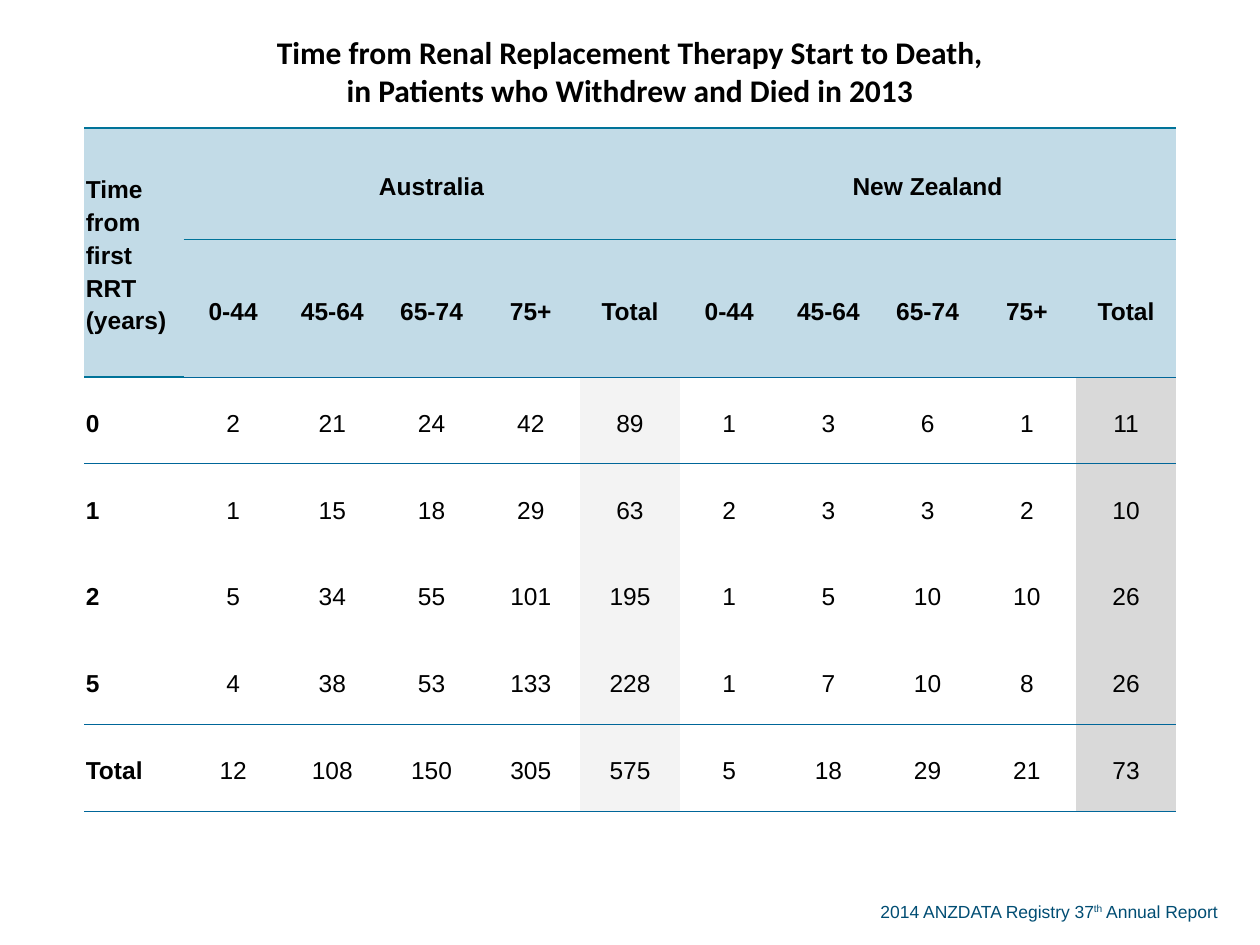
from lxml import etree
from pptx import Presentation
from pptx.dml.color import RGBColor
from pptx.enum.text import MSO_ANCHOR, PP_ALIGN
from pptx.oxml.ns import qn
from pptx.util import Cm, Pt

LEFT, CENTER = PP_ALIGN.LEFT, PP_ALIGN.CENTER
MIDDLE = MSO_ANCHOR.MIDDLE
BLANK_LAYOUT = 6
NO_GRID_STYLE = "{2D5ABB26-0587-4C30-8999-92F81FD0307C}"

TITLE = ["Time from Renal Replacement Therapy Start to Death,",
         "in Patients who Withdrew and Died in 2013"]
AGE_GROUPS = ["0-44", "45-64", "65-74", "75+", "Total"]
DEATHS = [
    ["0", 2, 21, 24, 42, 89, 1, 3, 6, 1, 11],
    ["1", 1, 15, 18, 29, 63, 2, 3, 3, 2, 10],
    ["2", 5, 34, 55, 101, 195, 1, 5, 10, 10, 26],
    ["5", 4, 38, 53, 133, 228, 1, 7, 10, 8, 26],
    ["Total", 12, 108, 150, 305, 575, 5, 18, 29, 21, 73],
]
COLUMNS = 11
COLUMN_WIDTH = 2
ROW_HEIGHTS = [2.25, 2.25, 2.77] + [1.75] * len(DEATHS)
HEADER_FILL = "C2DBE7"
TOTAL_FILLS = {5: "F3F3F3", 10: "D9D9D9"}
TITLE_RULE = ("007399", 0.75)
BODY_RULE = ("006699", 0.5)
# Rule below each table row that has one
RULES = {0: TITLE_RULE, 2: BODY_RULE, 6: BODY_RULE, 7: BODY_RULE}


def color(hex_value):
    return RGBColor.from_string(hex_value)


def style_font(font, name, size, hex_value, bold=False):
    font.name = name
    font.size = Pt(size)
    font.bold = bold
    font.color.rgb = color(hex_value)


def write_cell(cell, lines, align=CENTER, font="Arial", size=14, bold=False):
    cell.text_frame.text = "\n".join(lines)
    for para in cell.text_frame.paragraphs:
        para.alignment = align
        if font == "Arial":
            para.line_spacing = 1.19
            para.space_after = Pt(14)
        for span in para.runs:
            style_font(span.font, font, size, "000000", bold)


def format_cell(cell, fill, rule_above, rule_below):
    cell.vertical_anchor = MIDDLE
    cell.margin_left = cell.margin_right = cell.margin_top = Cm(0.03)
    cell.margin_bottom = 0
    if fill:
        cell.fill.solid()
        cell.fill.fore_color.rgb = color(fill)
    else:
        cell.fill.background()
    # Borders must come before the fill
    properties = cell._tc.get_or_add_tcPr()
    rules = [("a:lnT", rule_above), ("a:lnB", rule_below)]
    for position, (tag, rule) in enumerate(r for r in rules if r[1]):
        hex_value, width = rule
        line = etree.Element(qn(tag), w=str(Pt(width)))
        solid = etree.SubElement(line, qn("a:solidFill"))
        etree.SubElement(solid, qn("a:srgbClr"), val=hex_value)
        properties.insert(position, line)


def fill_for(row, column):
    if row == 0:
        return None
    return HEADER_FILL if row < 3 else TOTAL_FILLS.get(column)


def add_deaths_table(page):
    frame = page.shapes.add_table(
        len(ROW_HEIGHTS), COLUMNS, Cm(1.7), Cm(0.33),
        Cm(COLUMN_WIDTH * COLUMNS), Cm(sum(ROW_HEIGHTS)))
    table = frame.table
    table.first_row = table.horz_banding = False
    table._tbl.tblPr.find(qn("a:tableStyleId")).text = NO_GRID_STYLE
    for column in table.columns:
        column.width = Cm(COLUMN_WIDTH)
    for row, height in zip(table.rows, ROW_HEIGHTS):
        row.height = Cm(height)

    # Fills and rules
    for row in range(len(ROW_HEIGHTS)):
        for column in range(COLUMNS):
            format_cell(table.cell(row, column), fill_for(row, column),
                        RULES.get(row - 1), RULES.get(row))

    # Title and headings
    table.cell(0, 0).merge(table.cell(0, COLUMNS - 1))
    write_cell(table.cell(0, 0), TITLE, font="Calibri", size=18, bold=True)
    table.cell(1, 0).merge(table.cell(2, 0))
    write_cell(table.cell(1, 0), ["Time from first RRT (years)"], LEFT, bold=True)
    for first, country in [(1, "Australia"), (6, "New Zealand")]:
        table.cell(1, first).merge(table.cell(1, first + 4))
        write_cell(table.cell(1, first), [country], bold=True)
        for column, group in enumerate(AGE_GROUPS, first):
            write_cell(table.cell(2, column), [group], bold=True)

    # Counts
    for row, values in enumerate(DEATHS, 3):
        for column, value in enumerate(values):
            is_label = column == 0
            write_cell(table.cell(row, column), [str(value)],
                       LEFT if is_label else CENTER, bold=is_label)


def add_source_note(page):
    box = page.shapes.add_textbox(Cm(17.5), Cm(18.03), Cm(7.6), Cm(0.69))
    box.text_frame.word_wrap = True
    para = box.text_frame.paragraphs[0]
    for text in ["2014 ANZDATA Registry 37", "th", " Annual Report"]:
        span = para.add_run()
        span.text = text
        style_font(span.font, "Arial", 10, "004D73")
        if text == "th":
            span._r.get_or_add_rPr().set("baseline", "30000")


def main():
    deck = Presentation()
    deck.slide_width, deck.slide_height = Cm(25.4), Cm(19.05)
    page = deck.slides.add_slide(deck.slide_layouts[BLANK_LAYOUT])
    add_source_note(page)
    add_deaths_table(page)
    deck.save("out.pptx")


if __name__ == "__main__":
    main()
